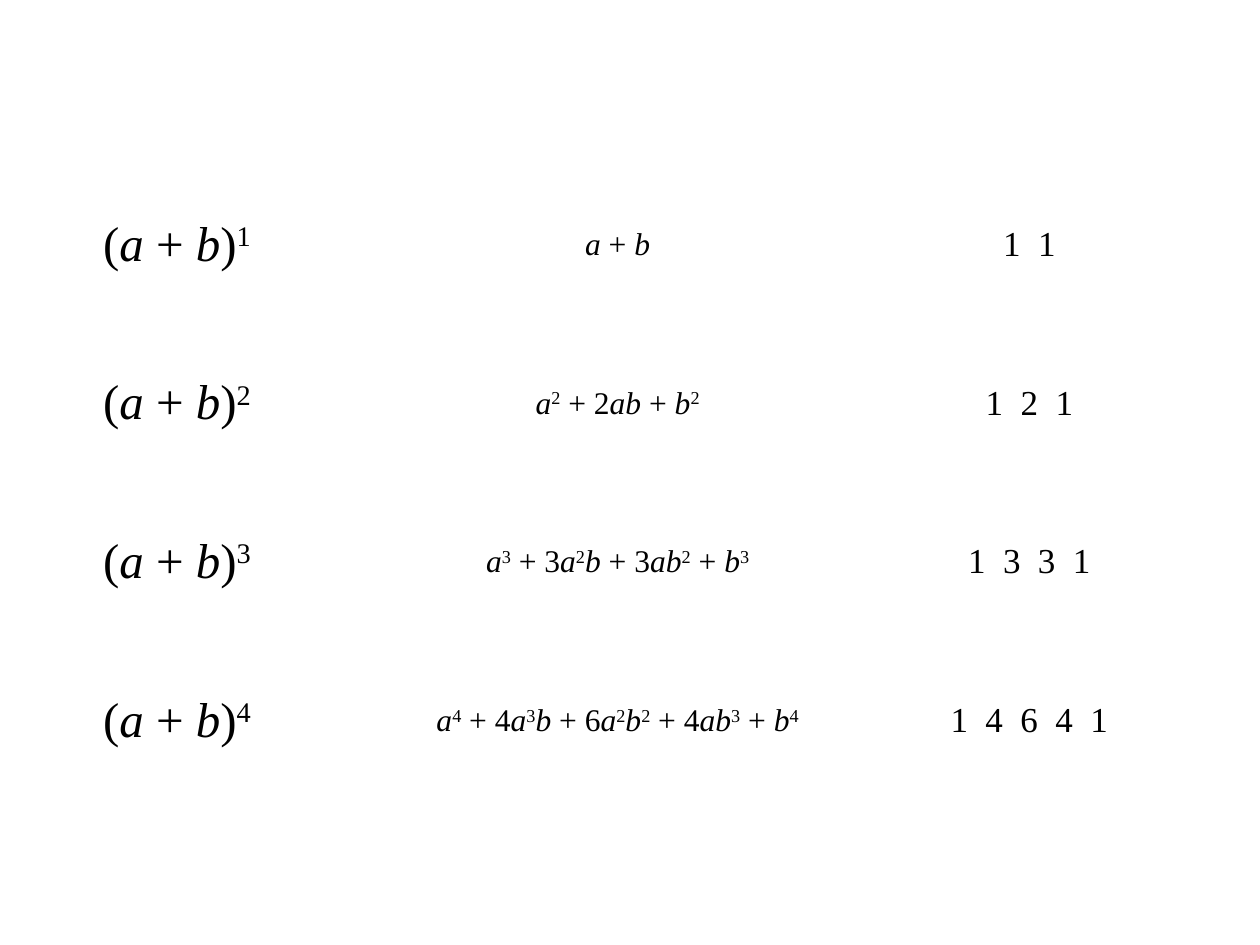
import math

import pptx
import pptx.dml.color
import pptx.enum.text
import pptx.util

Cm = pptx.util.Cm
ALIGN = pptx.enum.text.PP_ALIGN
FONT = "Times New Roman"
NO_BREAK_SPACE = chr(160)
PLUS = f"{NO_BREAK_SPACE}+{NO_BREAK_SPACE}"


def colour(value):
    return pptx.dml.color.RGBColor.from_string(value)


def add_text(paragraph, text, size, italic=False, raised=False, spacing=0):
    """Add one run; spacing is the extra gap after each character in points."""
    run = paragraph.add_run()
    run.text = text
    run.font.name = FONT
    run.font.size = pptx.util.Pt(size)
    run.font.italic = italic
    run.font.color.rgb = colour("000000")
    properties = run._r.get_or_add_rPr()
    if raised:
        properties.set("baseline", "30000")
    if spacing:
        properties.set("spc", str(int(spacing * 100)))


def format_cell(cell, align, indent=0):
    cell.fill.solid()
    cell.fill.fore_color.rgb = colour("FFFFFF")
    cell.vertical_anchor = pptx.enum.text.MSO_ANCHOR.MIDDLE
    cell.margin_left, cell.margin_right = Cm(0.08 + indent), Cm(0.08)
    cell.margin_top = cell.margin_bottom = Cm(0.13)
    paragraph = cell.text_frame.paragraphs[0]
    paragraph.alignment = align
    return paragraph


def write_power(paragraph, exponent, size=28):
    add_text(paragraph, "(", size)
    add_text(paragraph, "a", size, italic=True)
    add_text(paragraph, PLUS, size)
    add_text(paragraph, "b", size, italic=True)
    add_text(paragraph, ")", size)
    add_text(paragraph, str(exponent), size, raised=True)


def write_expansion(paragraph, coefficients, size=18):
    exponent = len(coefficients) - 1
    for index, coefficient in enumerate(coefficients):
        # Sign and coefficient, where a coefficient of 1 is not written
        if coefficient > 1:
            add_text(paragraph, f"{NO_BREAK_SPACE}+ {coefficient}", size)
        elif index:
            add_text(paragraph, PLUS, size)
        # Letters with their powers
        for letter, power in (("a", exponent - index), ("b", index)):
            if power:
                add_text(paragraph, letter, size, italic=True)
            if power > 1:
                add_text(paragraph, str(power), size, raised=True)


def write_coefficients(paragraph, coefficients, size=20):
    add_text(paragraph, " ".join(map(str, coefficients)), size, spacing=2.5)


def add_binomial_table(slide, left, top, width, height, exponents):
    table = slide.shapes.add_table(
        len(exponents), 3, Cm(left), Cm(top), Cm(width), Cm(height)).table
    table.first_row = table.horz_banding = False
    for row, exponent in enumerate(exponents):
        coefficients = [math.comb(exponent, k) for k in range(exponent + 1)]
        write_power(format_cell(table.cell(row, 0), ALIGN.LEFT, indent=2), exponent)
        write_expansion(format_cell(table.cell(row, 1), ALIGN.CENTER), coefficients)
        write_coefficients(format_cell(table.cell(row, 2), ALIGN.CENTER), coefficients)


def main():
    presentation = pptx.Presentation()
    presentation.slide_width, presentation.slide_height = Cm(25.4), Cm(19.05)
    slide = presentation.slides.add_slide(presentation.slide_layouts[6])
    # Powers, their expansions and the matching rows of Pascal's triangle
    add_binomial_table(slide, 0, 3.33, 24.9, 12.8, range(1, 5))
    presentation.save("out.pptx")


if __name__ == "__main__":
    main()
